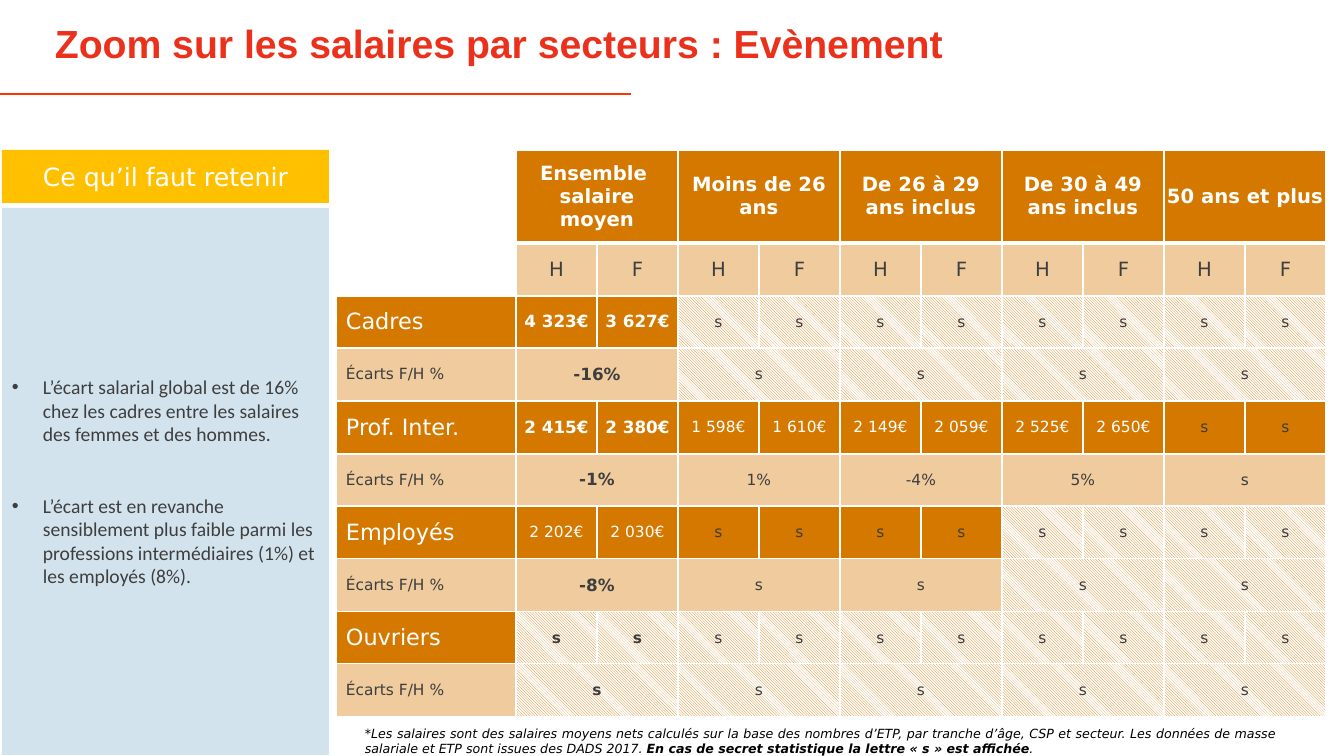
from lxml import etree
from pptx import Presentation
from pptx import util as u
from pptx.dml import color
from pptx.enum import dml, shapes, text
from pptx.oxml import ns

EMU_PER_PX = 914400 / 100.8
ORANGE, DARK, WHITE = "D57800", "3E3E3E", "FFFFFF"
SANS = "DejaVu Sans"
CENTER, LEFT = text.PP_ALIGN.CENTER, text.PP_ALIGN.LEFT
SALARY_HATCH = dml.MSO_PATTERN.DARK_DOWNWARD_DIAGONAL
GAP_HATCH = dml.MSO_PATTERN.LIGHT_DOWNWARD_DIAGONAL

AGE_GROUPS = [
    ["Ensemble ", "salaire moyen"],
    ["Moins de 26 ans"],
    ["De 26 à 29 ans inclus"],
    ["De 30 à 49 ans inclus"],
    ["50 ans et plus"],
]
# Category, salaries, gaps, first hatched age group, bold overall salaries
CATEGORIES = [
    ("Cadres", ["4 323€", "3 627€"] + ["s"] * 8,
     ["-16%"] + ["s"] * 4, 1, True),
    ("Prof. Inter.", ["2 415€", "2 380€", "1 598€", "1 610€", "2 149€",
                      "2 059€", "2 525€", "2 650€", "s", "s"],
     ["-1%", "1%", "-4%", "5%", "s"], 5, True),
    ("Employés", ["2 202€", "2 030€"] + ["s"] * 8,
     ["-8%"] + ["s"] * 4, 3, False),
    ("Ouvriers", ["s"] * 10, ["s"] * 5, 0, True),
]


def px(length):
    """Turn pixels into EMU."""
    return u.Emu(round(length * EMU_PER_PX))


def rgb(value):
    """Turn a hex string into a colour."""
    return color.RGBColor.from_string(value)


def paint(fill, value, opacity=100):
    """Fill solidly, with an opacity in percent."""
    fill.solid()
    fill.fore_color.rgb = rgb(value)
    if opacity < 100:
        solid = fill._xPr.find(ns.qn("a:solidFill"))
        etree.SubElement(solid[0], ns.qn("a:alpha"), val=str(opacity * 1000))


def hatch(fill, pattern):
    """Fill with orange stripes on white."""
    fill.patterned()
    fill.pattern = pattern
    fill.fore_color.rgb = rgb(ORANGE)
    fill.back_color.rgb = rgb(WHITE)


def add_run(paragraph, words, size, value, font=SANS, bold=False, italic=False):
    """Add one formatted run."""
    run = paragraph.add_run()
    run.text = words
    run.font.name, run.font.size = font, u.Pt(size)
    run.font.bold, run.font.italic = bold, italic
    run.font.color.rgb = rgb(value)


def add_text_box(slide, left, top, width, height):
    """Add a wrapping text box and return its frame."""
    frame = slide.shapes.add_textbox(px(left), px(top), px(width), px(height)).text_frame
    frame.word_wrap = True
    return frame


def add_panel(slide, top, height, value, opacity=100):
    """Add a borderless left-hand rectangle and return its frame."""
    shape = slide.shapes.add_shape(
        shapes.MSO_SHAPE.RECTANGLE, px(2), px(top), px(327), px(height))
    shape.shadow.inherit = False
    paint(shape.fill, value, opacity)
    shape.line.fill.background()
    shape.text_frame.word_wrap = True
    shape.text_frame.vertical_anchor = text.MSO_ANCHOR.MIDDLE
    return shape.text_frame


def add_bullet(paragraph, words):
    """Write a bulleted paragraph with a hanging indent."""
    paragraph.alignment = LEFT
    properties = paragraph._p.get_or_add_pPr()
    properties.set("marL", str(px(31)))
    properties.set("indent", str(-px(31)))
    etree.SubElement(properties, ns.qn("a:buFont"), typeface="Arial")
    etree.SubElement(properties, ns.qn("a:buChar"), char="•")
    add_run(paragraph, words, 14, DARK, "Calibri")


def add_rule(slide):
    """Draw the line under the title."""
    rule = slide.shapes.add_connector(
        shapes.MSO_CONNECTOR.STRAIGHT, 0, px(94), px(631), px(94))
    rule.line.color.rgb = rgb("FF3300")
    rule.line.width = u.Pt(1.5)
    etree.SubElement(rule._element.spPr, ns.qn("a:effectLst"))


def set_borders(cell, **widths):
    """Give a cell white borders, 1 pt wide unless stated."""
    properties = cell._tc.get_or_add_tcPr()
    for side in "LRTB":
        line = etree.SubElement(properties, ns.qn(f"a:ln{side}"),
                                w=str(u.Pt(widths.get(side, 1))))
        solid = etree.SubElement(line, ns.qn("a:solidFill"))
        etree.SubElement(solid, ns.qn("a:srgbClr"), val=WHITE)


def write_cell(cell, lines, size, value, bold=False, align=CENTER, margin=1):
    """Write one paragraph per line, centred vertically."""
    cell.vertical_anchor = text.MSO_ANCHOR.MIDDLE
    cell.margin_left = cell.margin_right = px(margin)
    frame = cell.text_frame
    for index, words in enumerate(lines):
        paragraph = frame.add_paragraph() if index else frame.paragraphs[0]
        paragraph.alignment = align
        add_run(paragraph, words, size, value, bold=bold)


def fill_header(table):
    """Write the age groups and the H and F columns."""
    for group, lines in enumerate(AGE_GROUPS):
        column = 1 + 2 * group
        cell = table.cell(0, column)
        cell.merge(table.cell(0, column + 1))
        paint(cell.fill, ORANGE)
        write_cell(cell, lines, 14, WHITE, True, margin=10 if group < 2 else 1)
        for offset, letter in enumerate("HF"):
            cell = table.cell(1, column + offset)
            paint(cell.fill, ORANGE, 38)
            write_cell(cell, [letter], 14, DARK)


def fill_category(table, row, name, salaries, gaps, first_hatched, bold_salaries):
    """Write a salary row and the gap row below it."""
    for offset, (label, size, value, opacity) in enumerate(
            [(name, 16, WHITE, 100), ("Écarts F/H %", 11, DARK, 38)]):
        cell = table.cell(row + offset, 0)
        paint(cell.fill, ORANGE, opacity)
        write_cell(cell, [label], size, value, align=LEFT, margin=10)
    for index, salary in enumerate(salaries):
        cell = table.cell(row, 1 + index)
        if index // 2 >= first_hatched:
            hatch(cell.fill, SALARY_HATCH)
        else:
            paint(cell.fill, ORANGE)
        bold = index < 2 and bold_salaries
        write_cell(cell, [salary], 12 if bold and salary != "s" else 11,
                   DARK if salary == "s" else WHITE, bold)
    for group, gap in enumerate(gaps):
        cell = table.cell(row + 1, 1 + 2 * group)
        cell.merge(table.cell(row + 1, 2 + 2 * group))
        if group >= first_hatched:
            hatch(cell.fill, GAP_HATCH)
        else:
            paint(cell.fill, ORANGE, 38)
        bold = group == 0
        write_cell(cell, [gap], 12 if bold and gap != "s" else 11, DARK, bold)


def add_salary_table(slide):
    """Add the salary table."""
    widths, heights = [180] + [81] * 10, [93] + [53, 52, 53] * 3
    table = slide.shapes.add_table(
        len(heights), len(widths), px(336), px(150),
        px(sum(widths)), px(sum(heights))).table
    table.first_row = table.horz_banding = False
    for column, width in zip(table.columns, widths):
        column.width = px(width)
    for index, height in enumerate(heights):
        table.rows[index].height = px(height)
        for cell in table.rows[index].cells:
            set_borders(cell, B=3 if index == 0 else 1, T=3 if index == 1 else 1)
    for row in (0, 1):
        table.cell(row, 0).fill.background()
    fill_header(table)
    for index, category in enumerate(CATEGORIES):
        fill_category(table, 2 + 2 * index, *category)


def main():
    """Build the slide and save it."""
    presentation = Presentation()
    presentation.slide_width, presentation.slide_height = px(1344), px(756)
    slide = presentation.slides.add_slide(presentation.slide_layouts[6])
    add_rule(slide)

    title = add_text_box(slide, 45, 9, 1210, 74)
    title.vertical_anchor = text.MSO_ANCHOR.MIDDLE
    title.paragraphs[0].line_spacing = 0.9
    add_run(title.paragraphs[0], "Zoom sur les salaires par secteurs : Evènement",
            28, "EB311B", "Arial", True)

    heading = add_panel(slide, 150, 53, "FFC000").paragraphs[0]
    heading.alignment = CENTER
    add_run(heading, "Ce qu’il faut retenir", 18, WHITE)

    findings = add_panel(slide, 208, 547, "2373A5", 20)
    add_bullet(findings.paragraphs[0], "L’écart salarial global est de 16% chez les "
               "cadres entre les salaires des femmes et des hommes.")
    second = findings.add_paragraph()
    second.space_before = u.Pt(34)
    add_bullet(second, "L’écart est en revanche sensiblement plus faible parmi les "
               "professions intermédiaires (1%) et les employés (8%).")

    footnote = add_text_box(slide, 355, 721, 930, 40).paragraphs[0]
    footnote.alignment = text.PP_ALIGN.JUSTIFY
    for words, bold in [
            ("*Les salaires sont des salaires moyens nets calculés sur la base des "
             "nombres d’ETP, par tranche d’âge, CSP et secteur. Les données de masse "
             "salariale et ETP sont issues des DADS 2017. ", False),
            ("En cas de secret statistique la lettre « s » est affichée", True),
            (".", False)]:
        add_run(footnote, words, 9, "000000", bold=bold, italic=True)

    add_salary_table(slide)
    presentation.save("out.pptx")


if __name__ == "__main__":
    main()
